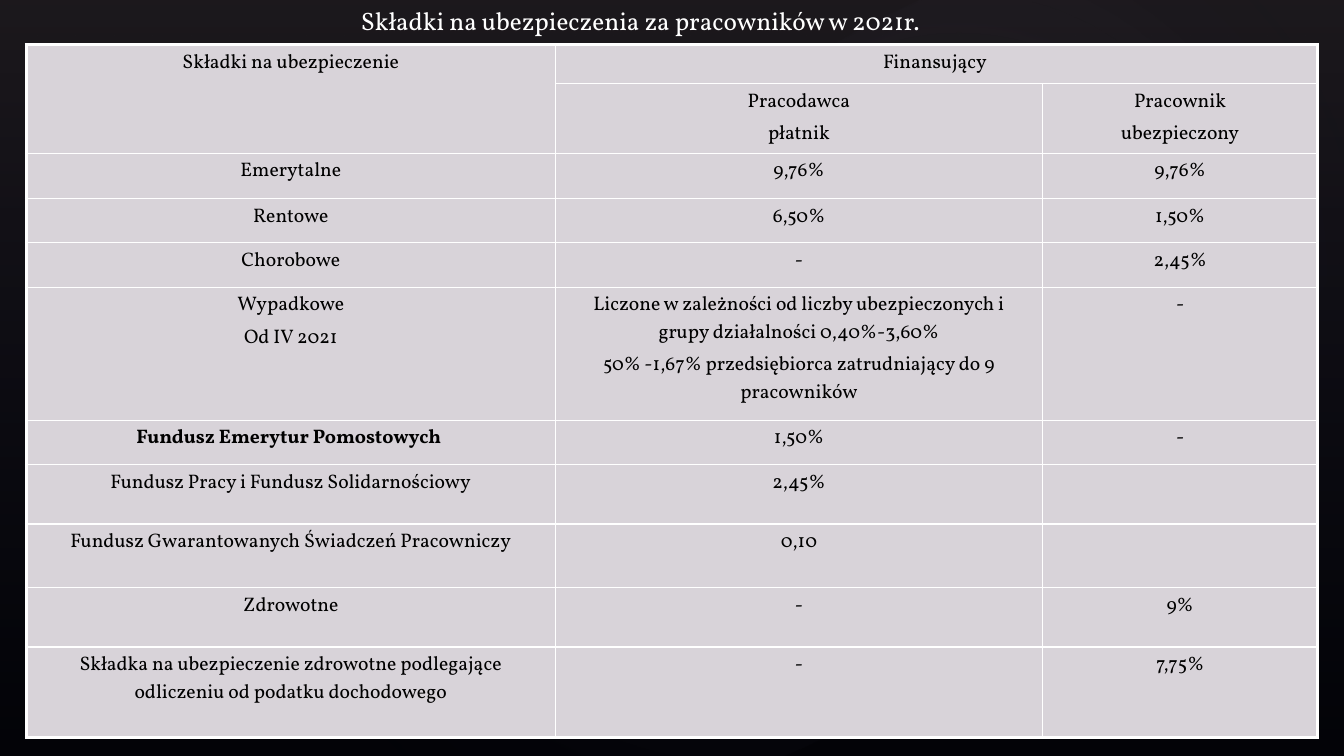
from pptx import Presentation
from pptx.dml.color import RGBColor
from pptx.enum import shapes, text
from pptx.oxml import parse_xml
from pptx.oxml.ns import nsdecls
from pptx.util import Inches, Pt

TITLE = "Składki na ubezpieczenia za pracowników w 2021r."
BOLD_LABEL = "Fundusz Emerytur Pomostowych "
ROWS = [
    (0.39, ["Składki na ubezpieczenie"], ["Finansujący "], []),
    (0.69, [], ["Pracodawca", "płatnik"], ["Pracownik", "ubezpieczony"]),
    (0.45, ["Emerytalne"], ["9,76%"], ["9,76%"]),
    (0.44, ["Rentowe"], ["6,50%"], ["1,50%"]),
    (0.44, ["Chorobowe"], ["-"], ["2,45%"]),
    (1.32, ["Wypadkowe", "Od IV 2021"],
     ["Liczone w zależności od liczby ubezpieczonych i grupy działalności 0,40%-3,60%",
      "50% -1,67% przedsiębiorca zatrudniający do 9 pracowników"], ["-"]),
    (0.44, [BOLD_LABEL], ["1,50%"], ["-"]),
    (0.59, ["Fundusz Pracy i Fundusz Solidarnościowy"], ["2,45%"], []),
    (0.63, ["Fundusz Gwarantowanych Świadczeń Pracowniczy"], ["0,10"], []),
    (0.59, ["Zdrowotne"], ["-"], ["9%"]),
    (0.9, ["Składka na ubezpieczenie zdrowotne podlegające odliczeniu od podatku dochodowego"],
     ["-"], ["7,75%"]),
]
COLUMN_WIDTHS = [5.25, 4.83, 2.73]
MERGES = [((0, 0), (1, 0)), ((0, 1), (0, 2))]

FONT = "Vollkorn"
WHITE = RGBColor(0xFF, 0xFF, 0xFF)
BLACK = RGBColor(0, 0, 0)
CELL_FILL = RGBColor(0xD8, 0xD3, 0xD9)
VEIL = RGBColor(0x50, 0x46, 0x52)
GLOW = RGBColor(0xC4, 0xBC, 0xC6)
NAVY = RGBColor(0x24, 0x28, 0x52)
THIN, THICK = Pt(1), Pt(2.25)

LINEAR = '<a:lin ang="5400000" scaled="0"/>'
RADIAL = '<a:path path="circle"><a:fillToRect l="50000" t="50000" r="50000" b="50000"/></a:path>'
RECTANGLE, OVAL = shapes.MSO_SHAPE.RECTANGLE, shapes.MSO_SHAPE.OVAL
BACKDROP = [
    (RECTANGLE, (0, 0, 13.33, 7.5), 0, [(0, VEIL, 36), (100, NAVY, 10)], LINEAR),
    (OVAL, (2, 1.14, 10.56, 6.24), 328.7, [(0, GLOW, 7), (58, NAVY, 0)], RADIAL),
    (OVAL, (0.61, 0.46, 6.06, 6.53), 294.3, [(0, GLOW, 8), (58, NAVY, 0)], RADIAL),
    (OVAL, (4.78, 0.13, 9.45, 5.2), 328.7, [(0, GLOW, 8), (58, NAVY, 0)], RADIAL),
]


def add_backdrop(slide):
    background = slide.background.fill
    background.solid()
    background.fore_color.rgb = BLACK
    for kind, frame, rotation, stops, direction in BACKDROP:
        shape = slide.shapes.add_shape(kind, *map(Inches, frame))
        shape.rotation = rotation
        shape.shadow.inherit = False
        shape.line.fill.background()
        stop_list = "".join(
            f'<a:gs pos="{position * 1000}"><a:srgbClr val="{color}">'
            f'<a:alpha val="{opacity * 1000}"/></a:srgbClr></a:gs>'
            for position, color, opacity in stops)
        gradient = parse_xml(
            f'<a:gradFill {nsdecls("a")} rotWithShape="1">'
            f'<a:gsLst>{stop_list}</a:gsLst>{direction}</a:gradFill>')
        shape._element.spPr.insert(2, gradient)


def style(paragraph, size, color, bold=False):
    paragraph.alignment = text.PP_ALIGN.CENTER
    font = paragraph.font
    font.name, font.size, font.bold = FONT, Pt(size), bold
    font.color.rgb = color


def add_borders(cell, row, column):
    outer = {
        "lnL": column == 0,
        "lnR": column + cell.span_width == len(COLUMN_WIDTHS),
        "lnT": row == 0,
        "lnB": row + cell.span_height == len(ROWS),
    }
    properties = cell._tc.get_or_add_tcPr()
    for side, is_outer in outer.items():
        width = THICK if is_outer else THIN
        properties.append(parse_xml(
            f'<a:{side} {nsdecls("a")} w="{width}"><a:solidFill>'
            f'<a:srgbClr val="{WHITE}"/></a:solidFill></a:{side}>'))


def fill_cell(cell, lines):
    cell.fill.solid()
    cell.fill.fore_color.rgb = CELL_FILL
    cell.margin_left = cell.margin_right = Inches(0.13)
    cell.margin_top = cell.margin_bottom = Inches(0.05)
    frame = cell.text_frame
    frame.text = "\n".join(lines)
    for index, paragraph in enumerate(frame.paragraphs):
        style(paragraph, 14, BLACK, BOLD_LABEL in lines)
        if index:
            paragraph.space_before = Pt(3.6)


def add_title(slide):
    box = slide.shapes.add_textbox(Inches(1.34), 0, Inches(10.02), Inches(0.4))
    frame = box.text_frame
    frame.word_wrap = True
    frame.vertical_anchor = text.MSO_ANCHOR.BOTTOM
    frame.text = TITLE
    style(frame.paragraphs[0], 18, WHITE)


def add_rates(slide):
    table = slide.shapes.add_table(
        len(ROWS), len(COLUMN_WIDTHS), Inches(0.26), Inches(0.44),
        Inches(sum(COLUMN_WIDTHS)), Inches(sum(row[0] for row in ROWS))).table
    table.first_row = table.horz_banding = False
    for column, width in zip(table.columns, COLUMN_WIDTHS):
        column.width = Inches(width)
    for start, end in MERGES:
        table.cell(*start).merge(table.cell(*end))
    for row, (height, *cells) in enumerate(ROWS):
        table.rows[row].height = Inches(height)
        for column, lines in enumerate(cells):
            cell = table.cell(row, column)
            add_borders(cell, row, column)
            fill_cell(cell, lines)


def main():
    presentation = Presentation()
    presentation.slide_width, presentation.slide_height = Inches(13.33), Inches(7.5)
    slide = presentation.slides.add_slide(presentation.slide_layouts[6])
    add_backdrop(slide)
    add_title(slide)
    add_rates(slide)
    presentation.save("out.pptx")


if __name__ == "__main__":
    main()
